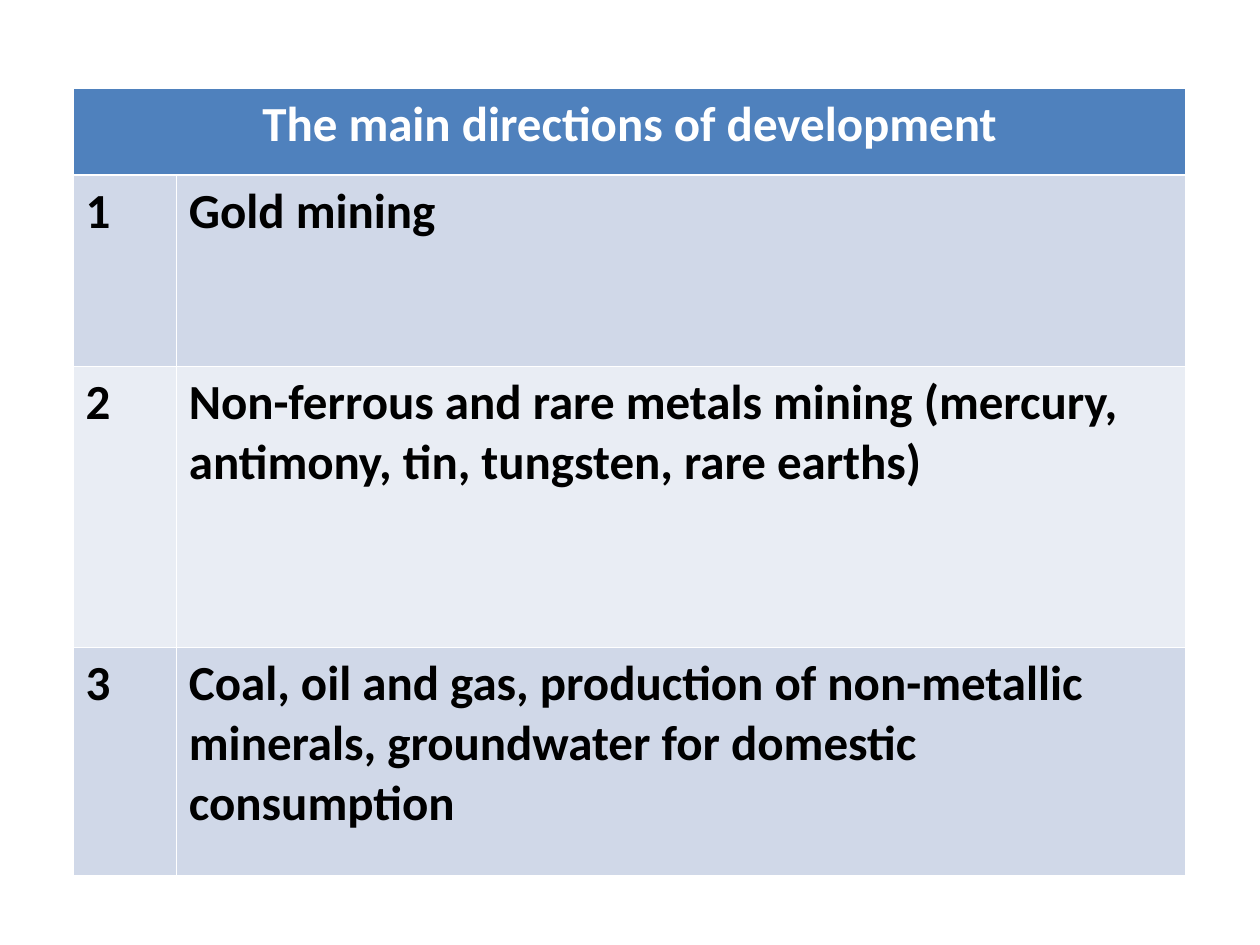
import pptx
import pptx.util
import pptx.dml.color
import pptx.enum.text
from dataclasses import dataclass

Inches = pptx.util.Inches

HEADING = "The main directions of development"
DIRECTIONS = [
    "Gold mining",
    "Non-ferrous and rare metals mining (mercury, antimony, tin, tungsten, rare earths)",
    "Coal, oil and gas, production of non-metallic minerals, "
    "groundwater for domestic consumption",
]
COLUMN_WIDTHS = [0.82, 8.01]
ROW_HEIGHTS = [0.69, 1.52, 2.23, 1.81]
LEFT, TOP = 0.58, 0.7


@dataclass(frozen=True)
class Theme:
    font: str = "Calibri"
    size: int = 28
    heading_text: str = "FFFFFF"
    heading_fill: str = "4F81BD"
    body_text: str = "000000"
    bands: tuple = ("D0D8E8", "E9EDF4")


THEME = Theme()


def rgb(code):
    return pptx.dml.color.RGBColor.from_string(code)


def fill_cell(cell, text, text_color, fill_color):
    cell.fill.solid()
    cell.fill.fore_color.rgb = rgb(fill_color)
    cell.text = text
    paragraph = cell.text_frame.paragraphs[0]
    paragraph.font.name = THEME.font
    paragraph.font.size = pptx.util.Pt(THEME.size)
    paragraph.font.bold = True
    paragraph.font.color.rgb = rgb(text_color)
    return paragraph


def main():
    deck = pptx.Presentation()
    deck.slide_width, deck.slide_height = Inches(10), Inches(7.5)
    slide = deck.slides.add_slide(deck.slide_layouts[6])

    # The default table style supplies the white rules between cells.
    directions = slide.shapes.add_table(
        len(ROW_HEIGHTS), len(COLUMN_WIDTHS), Inches(LEFT), Inches(TOP),
        Inches(sum(COLUMN_WIDTHS)), Inches(sum(ROW_HEIGHTS))).table
    for column, width in zip(directions.columns, COLUMN_WIDTHS):
        column.width = Inches(width)
    for row, height in zip(directions.rows, ROW_HEIGHTS):
        row.height = Inches(height)

    heading = directions.cell(0, 0)
    heading.merge(directions.cell(0, 1))
    paragraph = fill_cell(heading, HEADING, THEME.heading_text, THEME.heading_fill)
    paragraph.alignment = pptx.enum.text.PP_ALIGN.CENTER

    for number, direction in enumerate(DIRECTIONS, start=1):
        band = THEME.bands[(number - 1) % len(THEME.bands)]
        for column, text in enumerate((str(number), direction)):
            fill_cell(directions.cell(number, column), text, THEME.body_text, band)

    deck.save("out.pptx")


if __name__ == "__main__":
    main()
